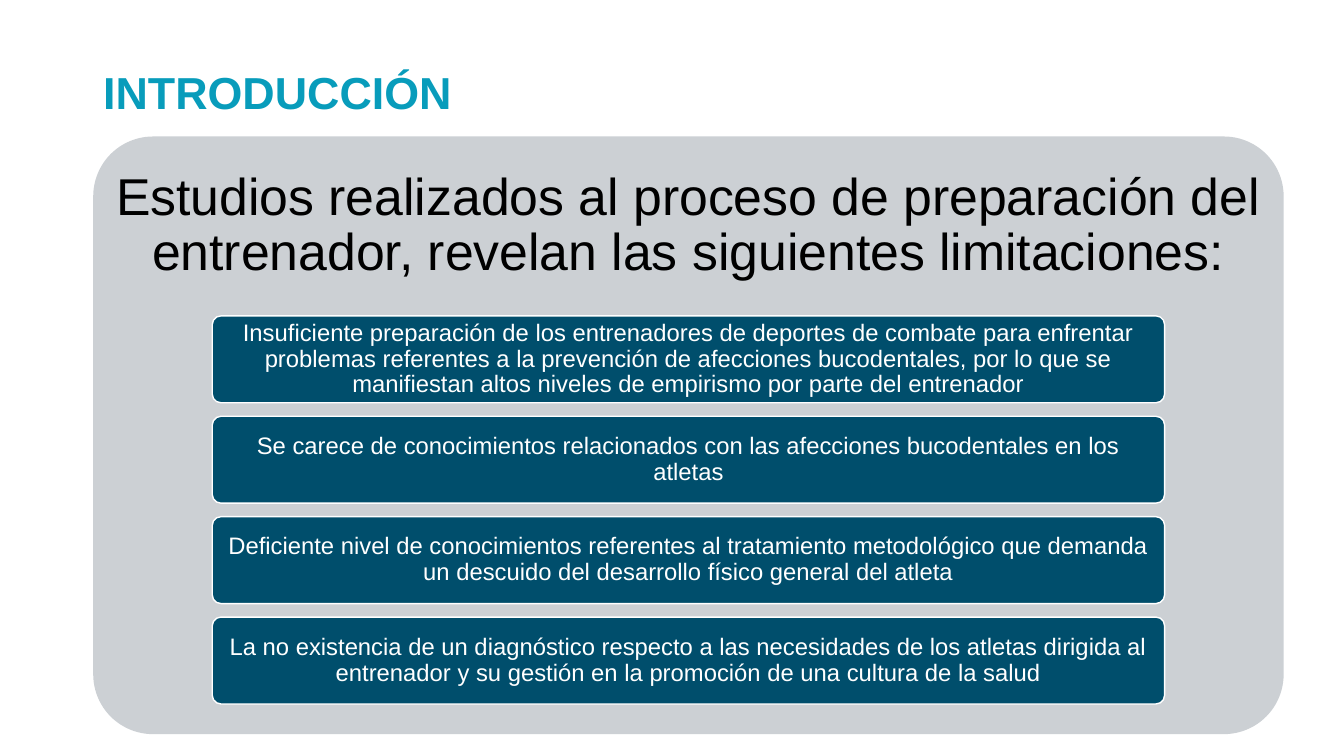
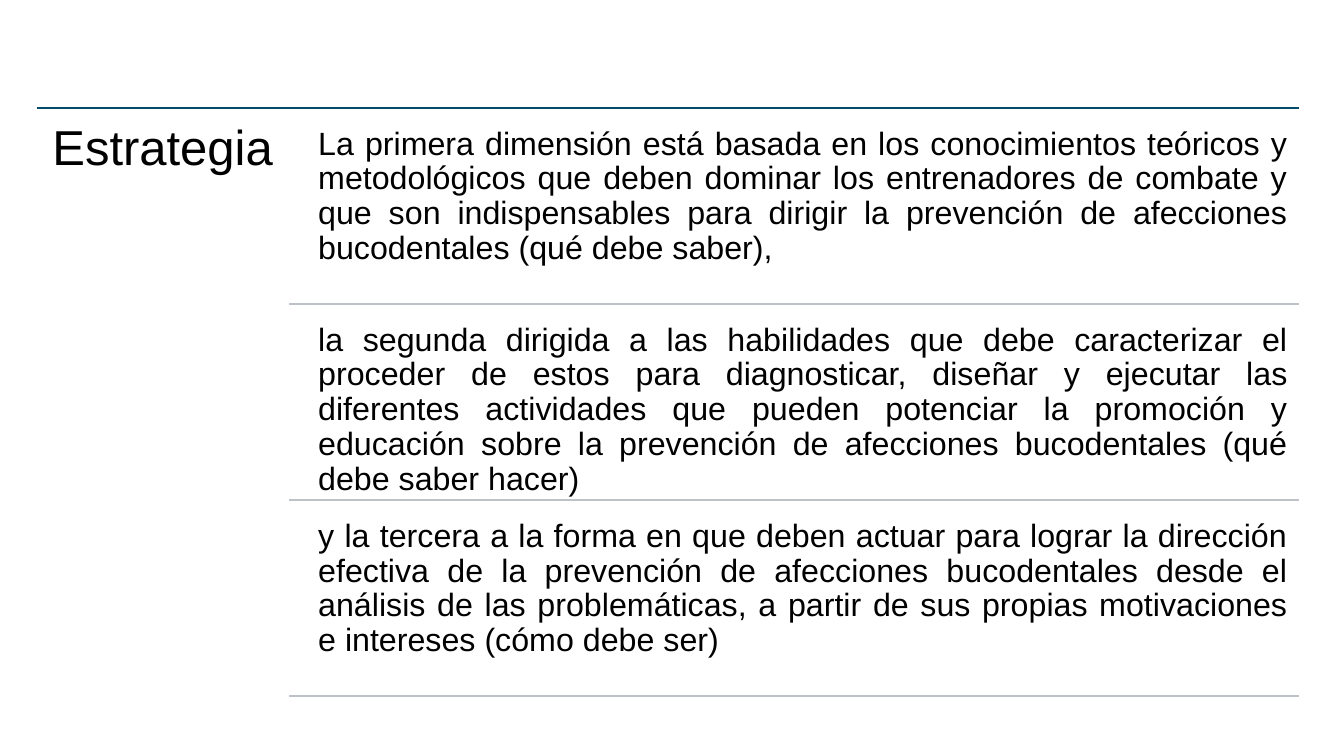
from lxml.etree import SubElement
from pptx import Presentation
from pptx.dml.color import RGBColor
from pptx.enum.shapes import MSO_CONNECTOR, MSO_SHAPE
from pptx.enum.text import MSO_ANCHOR, MSO_AUTO_SIZE, PP_ALIGN
from pptx.oxml.ns import qn
from pptx.util import Cm, Pt

# Shared style
FONT = "Arial"
TITLE, NAVY, PANEL = "089CBB", "004E6C", "CCD0D4"
RULE, BLACK, WHITE = "BDC2C8", "000000", "FFFFFF"


def color(value):
    return RGBColor.from_string(value)


def write(box, text, size, ink, align, anchor, margins, spacing=0.9, bold=False):
    """Fill a box with one formatted paragraph; margins are (sides, ends) in cm."""
    frame = box.text_frame
    frame.word_wrap = True
    frame.auto_size = MSO_AUTO_SIZE.NONE
    frame.vertical_anchor = anchor
    frame.margin_left = frame.margin_right = Cm(margins[0])
    frame.margin_top = frame.margin_bottom = Cm(margins[1])
    frame.text = text
    para = frame.paragraphs[0]
    para.alignment = align
    para.line_spacing = spacing
    para.font.name = FONT
    para.font.size = Pt(size)
    para.font.bold = bold
    para.font.color.rgb = color(ink)


deck = Presentation()
deck.slide_width, deck.slide_height = Cm(33.87), Cm(19.05)
title_only = deck.slide_layouts[5]

# Slide 1: introduction
page = deck.slides.add_slide(title_only)
title = page.shapes.title
title.left, title.top, title.width, title.height = Cm(2.35), Cm(1.27), Cm(29.21), Cm(2.25)
write(title, "INTRODUCCIÓN", 32, TITLE, PP_ALIGN.LEFT, MSO_ANCHOR.MIDDLE,
      (0.25, 0.13), spacing=0.9, bold=True)

# Grey panel and its heading
panel_left, panel_top, panel_width = Cm(2.35), Cm(3.44), Cm(30)
panel = page.shapes.add_shape(MSO_SHAPE.ROUNDED_RECTANGLE,
                              panel_left, panel_top, panel_width, Cm(15.06))
panel.adjustments[0] = 0.1
panel.shadow.inherit = False
panel.fill.solid()
panel.fill.fore_color.rgb = color(PANEL)
panel.line.fill.background()
heading = page.shapes.add_textbox(panel_left, panel_top, panel_width, Cm(4.52))
write(heading, "Estudios realizados al proceso de preparación del entrenador, "
      "revelan las siguientes limitaciones:", 37, BLACK,
      PP_ALIGN.CENTER, MSO_ANCHOR.MIDDLE, (0.38, 0.38))

# Stacked limitations
limitations = [
    "Insuficiente preparación de los entrenadores de deportes de combate para "
    "enfrentar problemas referentes a la prevención de afecciones bucodentales, "
    "por lo que se manifiestan altos niveles de empirismo por parte del entrenador",
    "Se carece de conocimientos relacionados con las afecciones bucodentales en los atletas",
    "Deficiente nivel de conocimientos referentes al tratamiento metodológico que "
    "demanda un descuido del desarrollo físico general del atleta",
    "La no existencia de un diagnóstico respecto a las necesidades de los atletas "
    "dirigida al entrenador y su gestión en la promoción de una cultura de la salud",
]
for index, text in enumerate(limitations):
    box = page.shapes.add_shape(MSO_SHAPE.ROUNDED_RECTANGLE, Cm(5.35),
                                Cm(7.96 + 2.53 * index), Cm(24), Cm(2.19))
    box.adjustments[0] = 0.1
    box.shadow.inherit = False
    box.fill.solid()
    box.fill.fore_color.rgb = color(NAVY)
    box.line.color.rgb = color(WHITE)
    box.line.width = Pt(1)
    write(box, text, 17, WHITE, PP_ALIGN.CENTER, MSO_ANCHOR.MIDDLE, (0.12, 0.09))

# Slide 2: strategy
page = deck.slides.add_slide(title_only)
top, pitch, right = 2.72, 4.94, 32.74
title = page.shapes.title
title.left, title.top, title.width, title.height = Cm(0.94), Cm(top), Cm(6.36), Cm(15.06)
write(title, "Estrategia", 35, BLACK, PP_ALIGN.LEFT, MSO_ANCHOR.TOP, (0.38, 0.38))

# Three dimensions
dimensions = [
    "La primera dimensión está basada en los conocimientos teóricos y metodológicos "
    "que deben dominar los entrenadores de combate y que son indispensables para "
    "dirigir la prevención de afecciones bucodentales (qué debe saber),",
    "la segunda dirigida a las habilidades que debe caracterizar el proceder de estos "
    "para diagnosticar, diseñar y ejecutar las diferentes actividades que pueden "
    "potenciar la promoción y educación sobre la prevención de afecciones "
    "bucodentales (qué debe saber hacer)",
    "y la tercera a la forma en que deben actuar para lograr la dirección efectiva de "
    "la prevención de afecciones bucodentales desde el análisis de las problemáticas, "
    "a partir de sus propias motivaciones e intereses (cómo debe ser)",
]
rules = [(0.94, top, NAVY)]
for index, text in enumerate(dimensions):
    box = page.shapes.add_textbox(Cm(7.77), Cm(top + 0.24 + pitch * index), Cm(24.97), Cm(4.7))
    write(box, text, 23, BLACK, PP_ALIGN.JUSTIFY, MSO_ANCHOR.TOP, (0.25, 0.25))
    rules.append((7.29, top + pitch * (index + 1), RULE))

# Top rule and the rule under each dimension
for left, height, ink in rules:
    rule = page.shapes.add_connector(MSO_CONNECTOR.STRAIGHT,
                                     Cm(left), Cm(height), Cm(right), Cm(height))
    rule.line.color.rgb = color(ink)
    rule.line.width = Pt(1)
    SubElement(rule._element.spPr, qn("a:effectLst"))

deck.save("out.pptx")
